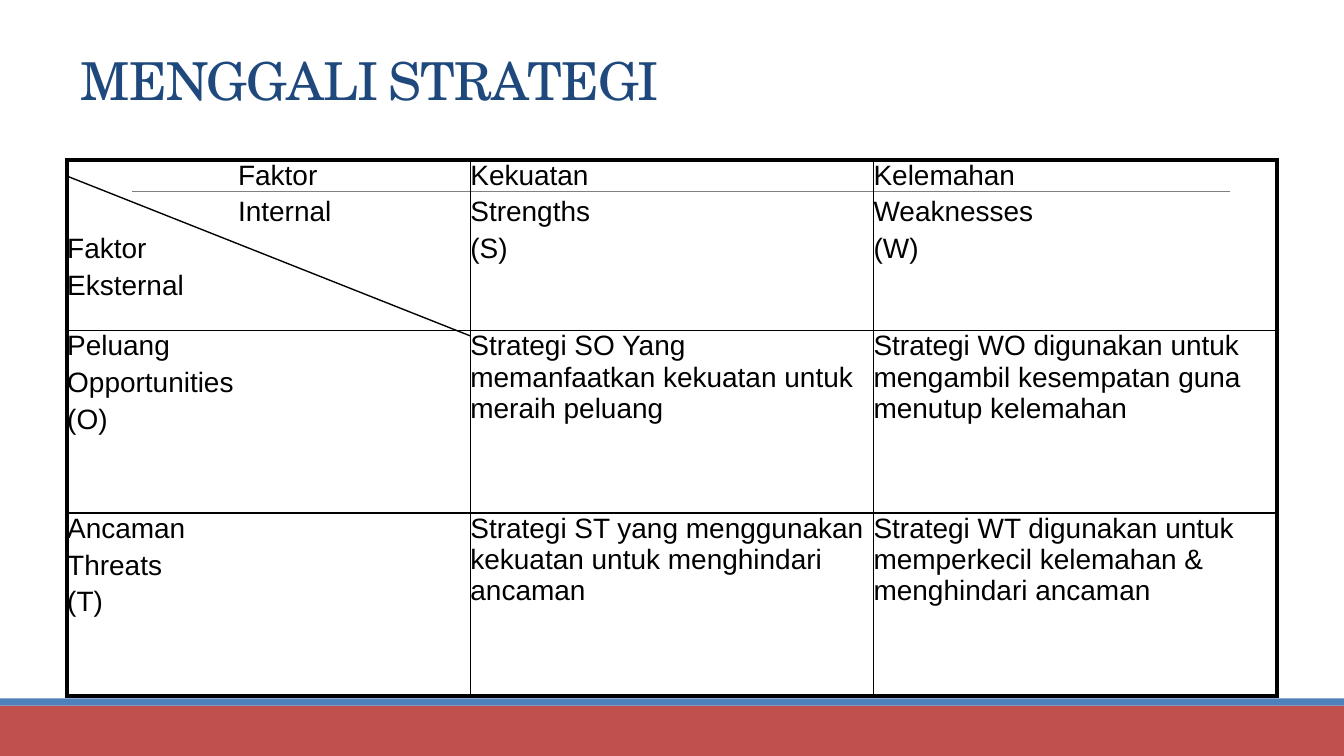
from dataclasses import dataclass

from lxml.etree import SubElement
from pptx import Presentation
from pptx.dml.color import RGBColor
from pptx.enum.shapes import MSO_CONNECTOR, MSO_SHAPE
from pptx.enum.text import MSO_ANCHOR, MSO_AUTO_SIZE, PP_ALIGN
from pptx.oxml.ns import qn
from pptx.slide import Slide
from pptx.table import Table, _Cell
from pptx.util import Cm, Pt


@dataclass(frozen=True)
class Theme:
    title_font: str = "TeX Gyre Schola"
    body_font: str = "Arial"
    title_size: float = 28
    body_size: float = 15
    paragraph_gap: float = 3
    outer_border: float = 2.25
    inner_border: float = 1
    title_color: str = "1F497D"
    ink: str = "000000"
    rule: str = "808080"
    footer: str = "C0504D"
    accent: str = "4F81BD"


@dataclass(frozen=True)
class Band:
    top: float
    height: float
    color: str


@dataclass(frozen=True)
class Rule:
    start: tuple[float, float]
    end: tuple[float, float]
    color: str
    width: float


@dataclass(frozen=True)
class CellText:
    lines: tuple[str, ...]
    indented_lines: int = 0


THEME = Theme()
SLIDE_WIDTH, SLIDE_HEIGHT = 25.4, 14.29
TABLE_LEFT, TABLE_TOP = 1.27, 3.02
COLUMN_WIDTH = 7.62
ROW_HEIGHTS = (3.23, 3.45, 3.45)
CORNER_INDENT = 3.23

BANDS = (
    Band(13.34, 0.95, THEME.footer),
    Band(13.2, 0.14, THEME.accent),
)
HEADER_RULE = Rule((2.49, 3.62), (23.24, 3.62), THEME.rule, 0.5)
CORNER_DIAGONAL = Rule(
    (TABLE_LEFT, 3.33), (TABLE_LEFT + COLUMN_WIDTH, 6.35), THEME.ink, 0.75
)
SWOT_MATRIX = (
    (
        CellText(("Faktor", "Internal", "Faktor", "Eksternal"), 2),
        CellText(("Kekuatan", "Strengths", "(S)")),
        CellText(("Kelemahan", "Weaknesses", "(W)")),
    ),
    (
        CellText(("Peluang", "Opportunities", "(O)")),
        CellText(("Strategi SO Yang memanfaatkan kekuatan untuk meraih peluang",)),
        CellText(("Strategi WO digunakan untuk mengambil kesempatan guna menutup kelemahan",)),
    ),
    (
        CellText(("Ancaman", "Threats", "(T)")),
        CellText(("Strategi ST yang menggunakan kekuatan untuk menghindari ancaman",)),
        CellText(("Strategi WT digunakan untuk memperkecil kelemahan & menghindari ancaman",)),
    ),
)


def draw_band(slide: Slide, band: Band) -> None:
    shape = slide.shapes.add_shape(
        MSO_SHAPE.RECTANGLE, 0, Cm(band.top), Cm(SLIDE_WIDTH), Cm(band.height)
    )
    shape.shadow.inherit = False
    shape.fill.solid()
    shape.fill.fore_color.rgb = RGBColor.from_string(band.color)
    shape.line.fill.background()


def draw_rule(slide: Slide, rule: Rule) -> None:
    connector = slide.shapes.add_connector(
        MSO_CONNECTOR.STRAIGHT, *map(Cm, rule.start + rule.end)
    )
    connector.line.color.rgb = RGBColor.from_string(rule.color)
    connector.line.width = Pt(rule.width)
    SubElement(connector._element.spPr, qn("a:effectLst"))


def draw_title(slide: Slide, text: str) -> None:
    title = slide.shapes.title
    title.left, title.top = Cm(1.27), Cm(0.58)
    title.width, title.height = Cm(22.86), Cm(1.65)
    frame = title.text_frame
    frame.text = text
    frame.auto_size = MSO_AUTO_SIZE.NONE
    frame.vertical_anchor = MSO_ANCHOR.BOTTOM
    paragraph = frame.paragraphs[0]
    paragraph.alignment = PP_ALIGN.LEFT
    font = paragraph.runs[0].font
    font.name = THEME.title_font
    font.size = Pt(THEME.title_size)
    font.color.rgb = RGBColor.from_string(THEME.title_color)
    properties = paragraph.runs[0]._r.get_or_add_rPr()
    properties.set("spc", "-40")
    properties.set("cap", "small")


def set_borders(cell: _Cell, row: int, column: int) -> None:
    last_row, last_column = len(ROW_HEIGHTS) - 1, len(SWOT_MATRIX[0]) - 1
    outer_sides = {
        "lnL": column == 0,
        "lnR": column == last_column,
        "lnT": row == 0,
        "lnB": row == last_row,
    }
    properties = cell._tc.get_or_add_tcPr()
    for side, is_outer in outer_sides.items():
        width = THEME.outer_border if is_outer else THEME.inner_border
        line = SubElement(properties, qn(f"a:{side}"), w=str(int(Pt(width))))
        fill = SubElement(line, qn("a:solidFill"))
        SubElement(fill, qn("a:srgbClr"), val=THEME.ink)


def fill_cell(cell: _Cell, content: CellText) -> None:
    cell.fill.background()
    cell.margin_left = cell.margin_right = cell.margin_top = cell.margin_bottom = 0
    cell.text_frame.text = "\n".join(content.lines)
    for index, paragraph in enumerate(cell.text_frame.paragraphs):
        paragraph.space_before = Pt(THEME.paragraph_gap if index else 0)
        if index < content.indented_lines:
            paragraph._p.get_or_add_pPr().set("marL", str(int(Cm(CORNER_INDENT))))
        font = paragraph.runs[0].font
        font.name = THEME.body_font
        font.size = Pt(THEME.body_size)
        font.color.rgb = RGBColor.from_string(THEME.ink)


def draw_matrix(slide: Slide) -> Table:
    rows, columns = len(SWOT_MATRIX), len(SWOT_MATRIX[0])
    table = slide.shapes.add_table(
        rows,
        columns,
        Cm(TABLE_LEFT),
        Cm(TABLE_TOP),
        Cm(COLUMN_WIDTH * columns),
        Cm(sum(ROW_HEIGHTS)),
    ).table
    table.first_row = table.horz_banding = False
    for column in table.columns:
        column.width = Cm(COLUMN_WIDTH)
    for row, contents in enumerate(SWOT_MATRIX):
        table.rows[row].height = Cm(ROW_HEIGHTS[row])
        for column, content in enumerate(contents):
            cell = table.cell(row, column)
            set_borders(cell, row, column)
            fill_cell(cell, content)
    return table


def main() -> None:
    presentation = Presentation()
    presentation.slide_width = Cm(SLIDE_WIDTH)
    presentation.slide_height = Cm(SLIDE_HEIGHT)
    slide = presentation.slides.add_slide(presentation.slide_layouts[5])
    for band in BANDS:
        draw_band(slide, band)
    draw_rule(slide, HEADER_RULE)
    draw_title(slide, "MENGGALI STRATEGI")
    draw_matrix(slide)
    draw_rule(slide, CORNER_DIAGONAL)
    presentation.save("out.pptx")


if __name__ == "__main__":
    main()
